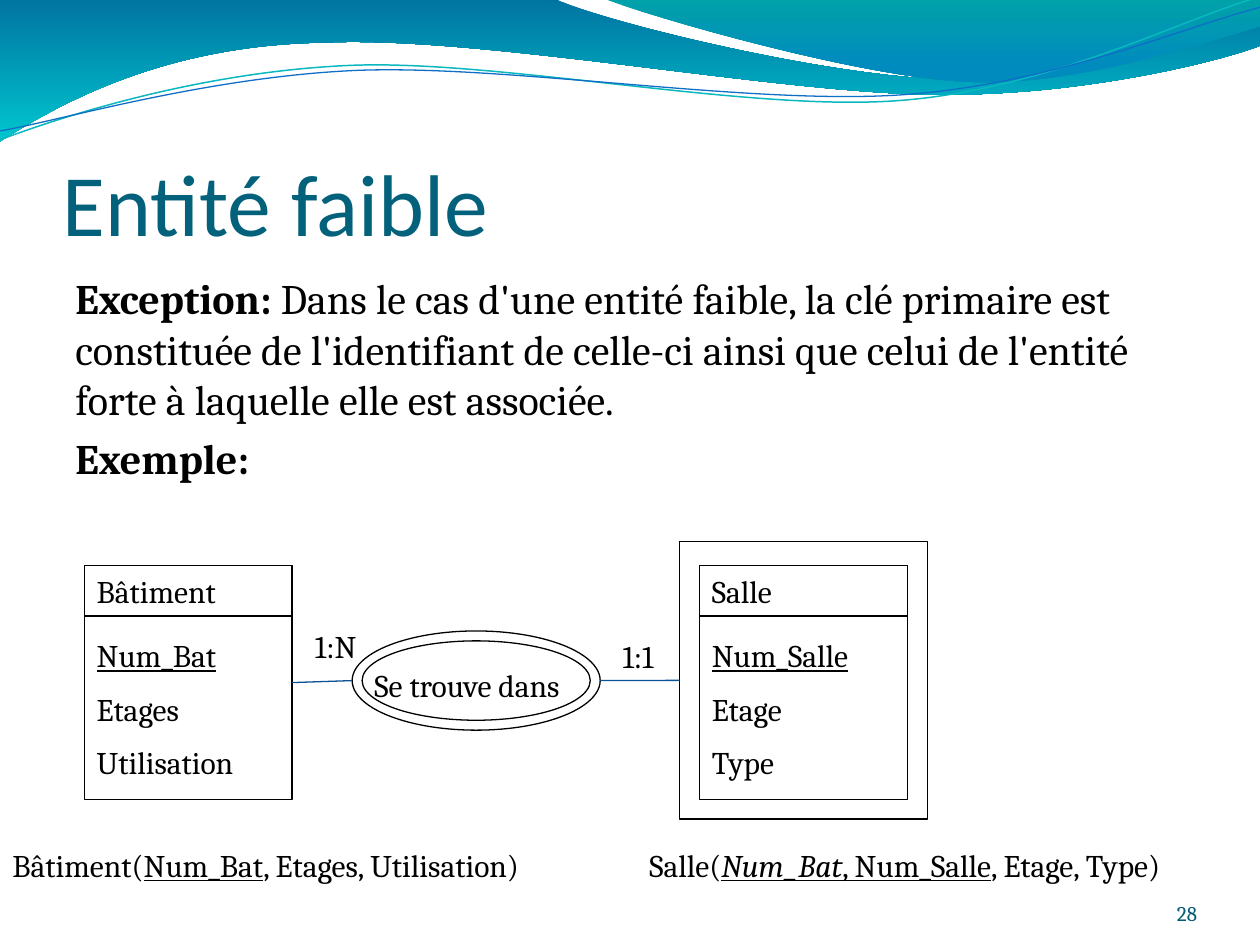
from lxml import etree
from pptx import Presentation
from pptx.dml.color import RGBColor
from pptx.enum.shapes import MSO_CONNECTOR, MSO_SHAPE
from pptx.enum.text import MSO_ANCHOR, PP_ALIGN
from pptx.oxml.ns import qn
from pptx.util import Cm, Pt

STRAIGHT = MSO_CONNECTOR.STRAIGHT
RECTANGLE, OVAL = MSO_SHAPE.RECTANGLE, MSO_SHAPE.OVAL
TOP, BOTTOM = MSO_ANCHOR.TOP, MSO_ANCHOR.BOTTOM
LEFT, RIGHT = PP_ALIGN.LEFT, PP_ALIGN.RIGHT
LEFT_SIDE, RIGHT_SIDE = 1, 3

BLACK = RGBColor(0x00, 0x00, 0x00)
TITLE_BLUE = RGBColor(0x04, 0x61, 0x7B)
NUMBER_BLUE = RGBColor(0x04, 0x5D, 0x75)
LINK_BLUE = RGBColor(0x09, 0x52, 0x95)
WAVE_TEAL = RGBColor(0x0A, 0xB8, 0xBF)
WAVE_BLUE = RGBColor(0x0F, 0x6F, 0xC6)
DEEP_BLUE = RGBColor(0x00, 0x74, 0xA1)
CYAN = RGBColor(0x00, 0xC6, 0xCF)
DARK_TEAL = RGBColor(0x00, 0xA1, 0xA9)
SKY_BLUE = RGBColor(0x00, 0x8B, 0xBF)

DEFAULT_INSETS = (0.25, 0.13, 0.25, 0.13)

WIDE_BAND = [
    [(0, 0)],
    [(11.18, -0.03)],
    [(12.09, 0.43), (16.87, 1.6), (19.25, 1.6)],
    [(21.67, 1.6), (24.33, 0.66), (25.4, 0.23)],
    [(25.43, 0.91)],
    [(24.97, 1.12), (22.1, 1.93), (18.95, 1.91)],
    [(15.8, 1.91), (9.7, 0.71), (6.53, 0.86)],
    [(3.28, 0.91), (1.17, 2.11), (-0.03, 2.87)],
]
RIGHT_BAND = [
    [(12.17, -0.03)],
    [(12.93, 0.28), (17.32, 1.57), (19.53, 1.65)],
    [(21.74, 1.75), (24.41, 0.81), (25.4, 0.53)],
    [(25.4, 0)],
]
TEAL_LINE = [
    [(0, 2.82)],
    [(1.22, 2.36), (4.01, 1.45), (7.04, 1.32)],
    [(10.03, 1.19), (15.06, 2.26), (18.11, 2.03)],
    [(21.16, 1.8), (23.83, 0.38), (25.35, -0.05)],
]
BLUE_LINE = [
    [(0, 2.64)],
    [(1.19, 2.44), (4.17, 1.55), (7.19, 1.42)],
    [(10.24, 1.3), (15.16, 2.13), (18.21, 1.91)],
    [(21.23, 1.7), (23.9, 0.53), (25.4, 0.15)],
]


def bend(shape, segments):
    steps = iter(list(shape.element.spPr.iter(qn("a:lnTo"))))
    for segment in segments[1:]:
        first, *others = [next(steps) for _ in segment]
        if others:
            first.tag = qn("a:cubicBezTo")
        for step in others:
            first.append(step[0])
            step.getparent().remove(step)


def add_outline(slide, segments, closed):
    start, *rest = [(Cm(x), Cm(y)) for segment in segments for x, y in segment]
    builder = slide.shapes.build_freeform(*start)
    builder.add_line_segments(rest, close=closed)
    shape = builder.convert_to_shape()
    bend(shape, segments)
    shape.shadow.inherit = False
    return shape


def add_band(slide, segments, stops):
    shape = add_outline(slide, segments, True)
    shape.line.fill.background()
    shape.fill.gradient()
    shape.fill.gradient_angle = 270
    colors = shape.element.spPr.iter(qn("a:srgbClr"))
    for stop, (position, color, _) in zip(shape.fill.gradient_stops, stops):
        stop.position = position
        stop.color.rgb = color
    for element, (_, _, opacity) in zip(colors, stops):
        etree.SubElement(element, qn("a:alpha"), val=str(opacity * 1000))


def add_wave_line(slide, segments, color, width):
    shape = add_outline(slide, segments, False)
    shape.fill.background()
    shape.line.color.rgb = color
    shape.line.width = Pt(width)


def write(shape, paragraphs, size=18, font="Cambria", color=BLACK, align=LEFT,
          anchor=TOP, insets=DEFAULT_INSETS, gap=0):
    frame = shape.text_frame
    frame.word_wrap = True
    frame.vertical_anchor = anchor
    frame.margin_left, frame.margin_top, frame.margin_right, frame.margin_bottom = map(Cm, insets)
    for index, runs in enumerate(paragraphs):
        paragraph = frame.add_paragraph() if index else frame.paragraphs[0]
        paragraph.alignment = align
        paragraph.space_before = Pt(gap if index else 0)
        for text, style in runs:
            run = paragraph.add_run()
            run.text = text
            run.font.size = Pt(size)
            run.font.name = font
            run.font.color.rgb = color
            run.font.bold = "b" in style
            run.font.italic = "i" in style
            run.font.underline = "u" in style


def add_text(slide, box, paragraphs, **text_format):
    write(slide.shapes.add_textbox(*map(Cm, box)), paragraphs, **text_format)


def add_frame(slide, kind, box):
    shape = slide.shapes.add_shape(kind, *map(Cm, box))
    shape.shadow.inherit = False
    shape.fill.background()
    shape.line.color.rgb = BLACK
    shape.line.width = Pt(0.75)
    return shape


def add_entity(slide, left, name, key, attributes):
    body = add_frame(slide, RECTANGLE, (left, 11.4, 4.19, 4.72))
    header = add_frame(slide, RECTANGLE, (left, 11.4, 4.19, 1.02))
    write(header, [[(name, "")]])
    rows = [[(key, "u")]] + [[(attribute, "")] for attribute in attributes]
    add_text(slide, (left, 12.7, 3.89, 3.33), rows, gap=8.8)
    return body


def add_link(slide, start, end):
    connector = slide.shapes.add_connector(STRAIGHT, *map(Cm, (*start, *end)))
    connector.line.color.rgb = LINK_BLUE
    connector.line.width = Pt(0.75)
    etree.SubElement(connector.element.spPr, qn("a:effectLst"))
    return connector


def main():
    presentation = Presentation()
    presentation.slide_width, presentation.slide_height = Cm(25.4), Cm(19.05)
    slide = presentation.slides.add_slide(presentation.slide_layouts[6])

    add_band(slide, WIDE_BAND, [(0, DEEP_BLUE, 45), (1, CYAN, 55)])
    add_band(slide, RIGHT_BAND, [(0, DARK_TEAL, 30), (0.8, SKY_BLUE, 45)])
    add_wave_line(slide, TEAL_LINE, WAVE_TEAL, 0.85)
    add_wave_line(slide, BLUE_LINE, WAVE_BLUE, 0.75)

    add_text(slide, (1.27, 1.95, 22.86, 3.17), [[("Entité faible", "")]], size=50,
             font="Calibri", color=TITLE_BLUE, anchor=BOTTOM, insets=(0, 0.13, 0, 0))
    add_text(slide, (1.27, 5.37, 22.86, 11.56), [
        [("Exception: ", "b"),
         ("Dans le cas d'une entité faible, la clé primaire est constituée de "
          "l'identifiant de celle-ci ainsi que celui de l'entité forte à laquelle "
          "elle est associée.", "")],
        [("Exemple:", "b")],
    ], size=24, gap=5)
    add_text(slide, (22.02, 17.65, 2.11, 1.02), [[("28", "")]], size=12,
             color=NUMBER_BLUE, align=RIGHT, anchor=BOTTOM, insets=(0, 0, 0, 0))

    building = add_entity(slide, 1.7, "Bâtiment", "Num_Bat", ["Etages", "Utilisation"])
    add_entity(slide, 14.1, "Salle", "Num_Salle", ["Etage", "Type"])
    weak_entity = add_frame(slide, RECTANGLE, (13.7, 10.92, 5, 5.59))

    add_text(slide, (7.3, 13.3, 4.8, 1.02), [[("Se trouve dans", "")]])
    add_frame(slide, OVAL, (7.3, 12.92, 4.6, 1.6))
    add_frame(slide, OVAL, (7.1, 12.72, 5, 2))

    add_link(slide, (5.89, 13.76), (7.1, 13.72)).begin_connect(building, RIGHT_SIDE)
    add_link(slide, (12.1, 13.72), (13.7, 13.72)).end_connect(weak_entity, LEFT_SIDE)
    add_text(slide, (6.1, 12.52, 1.8, 1.02), [[("1:N", "")]])
    add_text(slide, (12.3, 12.72, 1.8, 1.02), [[("1:1", "")]])

    add_text(slide, (0, 16.92, 12.09, 1.8),
             [[("Bâtiment(", ""), ("Num_Bat", "u"), (", Etages, Utilisation)", "")]])
    add_text(slide, (12.7, 16.92, 11.81, 1.02),
             [[(" Salle(", ""), ("Num_Bat", "iu"), (", Num_Salle", "u"),
               (", Etage, Type)", "")]])

    presentation.save("out.pptx")


if __name__ == "__main__":
    main()
